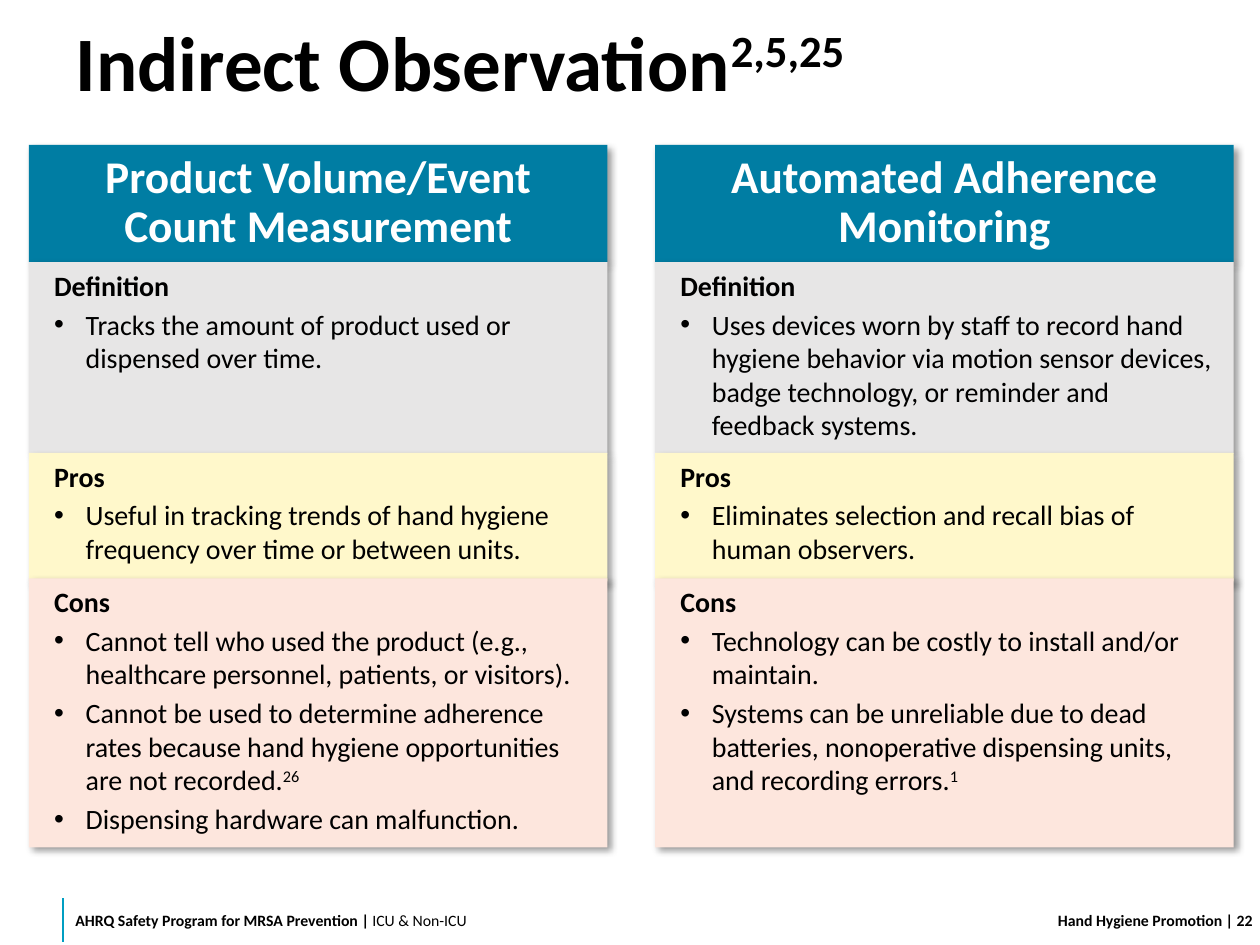
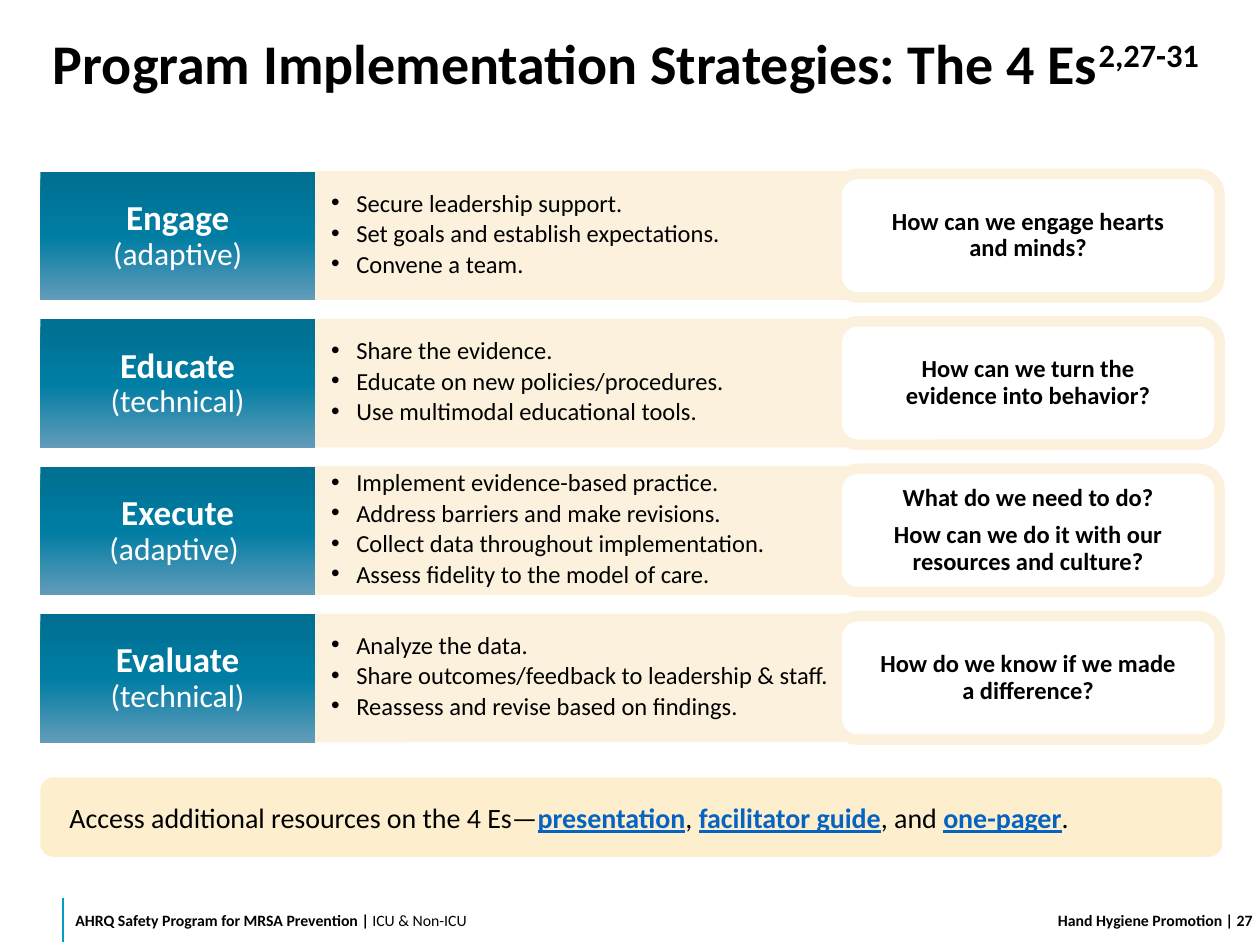
import copy
from dataclasses import dataclass
from typing import Any, NamedTuple

import lxml.etree
import pptx
import pptx.dml.color
import pptx.enum.shapes
import pptx.enum.text
import pptx.oxml.ns
import pptx.util

RGB = pptx.dml.color.RGBColor
KIND = pptx.enum.shapes.MSO_SHAPE
ALIGN = pptx.enum.text.PP_ALIGN
ANCHOR = pptx.enum.text.MSO_ANCHOR
Pt = pptx.util.Pt
qn = pptx.oxml.ns.qn

# Colours
BLACK = RGB(0x00, 0x00, 0x00)
WHITE = RGB(0xFF, 0xFF, 0xFF)
TEAL = RGB(0x00, 0x7D, 0xA3)
DEEP = RGB(0x00, 0x6F, 0x91)
PALE = RGB(0x63, 0x9C, 0xBA)
CYAN = RGB(0x00, 0x9E, 0xC2)
GREY = RGB(0xE7, 0xE6, 0xE6)
LEMON = RGB(0xFF, 0xF8, 0xCB)
ROSE = RGB(0xFD, 0xE6, 0xDD)
CREAM = RGB(0xFC, 0xF1, 0xDD)
SAND = RGB(0xFD, 0xEF, 0xCD)
BLUE = RGB(0x05, 0x63, 0xC1)

# The slide is a grid of 100 columns by 75 rows of equal unit
WIDE, HIGH = pptx.util.Inches(10), pptx.util.Inches(7.5)
UNIT = WIDE // 100
FACE = "Calibri"


def grid(cells: float) -> int:
    return round(cells * UNIT)


class Box(NamedTuple):
    col: float
    row: float
    cols: float
    rows: float

    def place(self) -> tuple:
        return tuple(grid(v) for v in self)


class Run(NamedTuple):
    text: str
    form: dict = {}
    high: bool = False


@dataclass
class Para:
    runs: list
    form: dict
    hang: float = 0


@dataclass
class Style:
    """Text frame look: insets in grid units, font and anchor."""
    pad: tuple
    font: dict
    anchor: Any = ANCHOR.MIDDLE


def put(item: Any, form: dict) -> None:
    for name, value in form.items():
        setattr(item, name, value)


def font(size: float, tint: RGB = BLACK, bold: bool = False) -> dict:
    return {"name": FACE, "size": Pt(size), "bold": bold, "tint": tint}


def write(frame: Any, style: Style, paras: list) -> None:
    sides = ("margin_left", "margin_top", "margin_right", "margin_bottom")
    put(frame, {"word_wrap": True, "vertical_anchor": style.anchor,
                "auto_size": pptx.enum.text.MSO_AUTO_SIZE.NONE,
                **{side: grid(v) for side, v in zip(sides, style.pad)}})
    for i, para in enumerate(paras):
        line = frame.paragraphs[0] if i == 0 else frame.add_paragraph()
        if para.hang:
            props = line._p.get_or_add_pPr()
            props.set("marL", str(grid(para.hang)))
            props.set("indent", str(-grid(para.hang)))
            lxml.etree.SubElement(props, qn("a:buFont")).set("typeface", "Arial")
            lxml.etree.SubElement(props, qn("a:buChar")).set("char", "•")
        put(line, {"alignment": ALIGN.LEFT, **para.form})
        if i == 0:
            line.space_before = Pt(0)
        for run in para.runs:
            part = line.add_run()
            part.text = run.text
            form = {**style.font, **run.form}
            part.font.color.rgb = form.pop("tint")
            put(part.font, form)
            if run.high:
                part._r.get_or_add_rPr().set("baseline", "30000")


def panel(slide: Any, box: Box, fill: RGB, kind: Any = KIND.RECTANGLE,
          edge: float = 0, shade: bool = False, bend: float = 0) -> Any:
    shape = slide.shapes.add_shape(kind, *box.place())
    shape.shadow.inherit = False
    shape.fill.solid()
    shape.fill.fore_color.rgb = fill
    if edge:
        shape.line.color.rgb = CREAM
        shape.line.width = Pt(edge)
    else:
        shape.line.fill.background()
    if bend:
        shape.adjustments[0] = bend
    if shade:
        cast(shape)
    return shape


def cast(shape: Any) -> None:
    """Add a soft drop shadow to the lower right."""
    outer = lxml.etree.SubElement(
        shape._element.spPr.find(qn("a:effectLst")), qn("a:outerShdw"),
        blurRad=str(Pt(4)), dist=str(Pt(3)), dir="2700000", algn="tl", rotWithShape="0")
    tint = lxml.etree.SubElement(outer, qn("a:srgbClr"), val=str(BLACK))
    lxml.etree.SubElement(tint, qn("a:alpha"), val="40000")


def blend(shape: Any, tints: list) -> None:
    """Fill from top to bottom with evenly spaced colours."""
    shape.fill.gradient()
    shape.fill.gradient_angle = 270
    stops = shape._element.spPr.find(qn("a:gradFill")).find(qn("a:gsLst"))
    while len(stops) < len(tints):
        stops.append(copy.deepcopy(stops[-1]))
    for i, (stop, tint) in enumerate(zip(shape.fill.gradient_stops, tints)):
        stop.position = i / (len(tints) - 1)
        stop.color.rgb = tint


def label(slide: Any, box: Box, style: Style, para: Para) -> None:
    write(slide.shapes.add_textbox(*box.place()).text_frame, style, [para])


# Shared frame: title and footer
SMALL = font(9, bold=True)


def start(deck: Any, box: Box, size: float, text: str, notes: str, page: int) -> Any:
    slide = deck.slides.add_slide(deck.slide_layouts[5])
    title = slide.shapes.title
    put(title, dict(zip(("left", "top", "width", "height"), box.place())))
    write(title.text_frame, Style((1, 1, 1, 0.5), font(size, bold=True)),
          [Para([Run(text), Run(notes, high=True)], {"line_spacing": 0.9})])

    rule = slide.shapes.add_connector(
        pptx.enum.shapes.MSO_CONNECTOR.STRAIGHT,
        grid(5), grid(71.3), grid(5), grid(74.8))
    rule.line.color.rgb = CYAN
    rule.line.width = Pt(1)
    lxml.etree.SubElement(rule._element.spPr, qn("a:effectLst"))

    label(slide, Box(5, 71, 41, 4), Style((1, 0, 1, 0), SMALL),
          Para([Run("AHRQ Safety Program for MRSA Prevention | "),
                Run("ICU & Non-ICU", {"bold": False})], {}))
    label(slide, Box(71, 71, 26, 4), Style((1, 0.5, 0, 0.5), SMALL),
          Para([Run("Hand Hygiene Promotion")], {"alignment": ALIGN.RIGHT}))
    label(slide, Box(97, 71, 3, 4), Style((0, 0.5, 0, 0.5), SMALL),
          Para([Run(f" | {page}")], {}))
    return slide


# Slide one: two stacked columns
class Band(NamedTuple):
    name: str
    row: float
    rows: float
    fill: RGB


BANDS = [Band("Definition", 20.8, 15.2, GREY),
         Band("Pros", 35.95, 10.2, LEMON),
         Band("Cons", 45.9, 21.35, ROSE)]

# Each point is its text and, if any, its raised note
METHODS = {
    "Product Volume/Event Count Measurement": [
        [("Tracks the amount of product used or dispensed over time.", "")],
        [("Useful in tracking trends of hand hygiene frequency over time "
          "or between units.", "")],
        [("Cannot tell who used the product (e.g., healthcare personnel, "
          "patients, or visitors).", ""),
         ("Cannot be used to determine adherence rates because hand hygiene "
          "opportunities are not recorded.", "26"),
         ("Dispensing hardware can malfunction.", "")]],
    "Automated Adherence Monitoring": [
        [("Uses devices worn by staff to record hand hygiene behavior via motion "
          "sensor devices, badge technology, or reminder and feedback systems.", "")],
        [("Eliminates selection and recall bias of human observers.", "")],
        [("Technology can be costly to install and/or maintain.", ""),
         ("Systems can be unreliable due to dead batteries, nonoperative "
          "dispensing units, and recording errors.", "1")]],
}
HEAD = Style((2, 0.5, 2, 0.5), font(25.9, WHITE, True))
BODY = Style((2, 0.5, 1.5, 0.5), font(16), ANCHOR.TOP)
MID = {"alignment": ALIGN.CENTER, "line_spacing": 0.9}


def compare(deck: Any) -> None:
    slide = start(deck, Box(5, 0, 90, 10), 44, "Indirect Observation", "2,5,25", 22)
    gap = {"space_before": Pt(3)}
    for i, (name, groups) in enumerate(METHODS.items()):
        col = 2.3 + i * 49.7
        top = panel(slide, Box(col, 11.5, 45.9, 9.3), TEAL, shade=True)
        write(top.text_frame, HEAD, [Para([Run(name)], MID)])
        for band, points in zip(BANDS, groups):
            card = panel(slide, Box(col, band.row, 45.9, band.rows), band.fill, shade=True)
            paras = [Para([Run(band.name, {"bold": True})], gap)]
            for text, note in points:
                runs = [Run(text)] + ([Run(note, high=True)] if note else [])
                paras.append(Para(runs, gap, 2.5))
            write(card.text_frame, BODY, paras)


# Slide two: four strategy rows
class Step(NamedTuple):
    name: str
    mode: str
    tasks: list
    asks: list


STEPS = [
    Step("Engage ", "(adaptive)",
         ["Secure leadership support.", "Set goals and establish expectations.",
          "Convene a team."],
         ["How can we engage hearts and minds?"]),
    Step("Educate ", "(technical)",
         ["Share the evidence.", "Educate on new policies/procedures.",
          "Use multimodal educational tools."],
         ["How can we turn the evidence into behavior?"]),
    Step("Execute ", "(adaptive) ",
         ["Implement evidence-based practice.", "Address barriers and make revisions.",
          "Collect data throughout implementation.",
          "Assess fidelity to the model of care."],
         ["What do we need to do?", "How can we do it with our resources and culture?"]),
    Step("Evaluate ", "(technical)",
         ["Analyze the data.", "Share outcomes/feedback to leadership & staff.",
          "Reassess and revise based on findings."],
         ["How do we know if we made a difference?"]),
]
TASK = Style((3.5, 0.1, 4.5, 0.1), font(14))
ASK = Style((2.5, 1.5, 2.5, 1.5), font(14, bold=True))
NAME = Style((3, 2, 3, 2), font(20, WHITE, True))
MORE = Style((2, 1.5, 2, 1.5), font(16))
ROUND = KIND.ROUNDED_RECTANGLE


def plan(deck: Any) -> None:
    slide = start(deck, Box(3.2, 0, 95.7, 10), 32,
                  "Program Implementation Strategies: The 4 Es", "2,27-31", 27)
    tight = {"line_spacing": 0.8, "space_before": Pt(2), "space_after": Pt(2)}
    for i, step in enumerate(STEPS):
        row = 13.8 + i * 11.7
        tasks = panel(slide, Box(22.3, row, 48.6, 9.8), CREAM, ROUND, 3, bend=0.17)
        write(tasks.text_frame, TASK, [Para([Run(t)], tight, 2) for t in step.tasks])
        asks = panel(slide, Box(66.4, row, 30.4, 9.8), WHITE, ROUND, 6, bend=0.17)
        write(asks.text_frame, ASK,
              [Para([Run(t)], {**MID, "space_after": Pt(6)}) for t in step.asks])
        name = panel(slide, Box(3.2, row - 0.15, 21.8, 10.2), TEAL)
        blend(name, [DEEP, TEAL, PALE])
        mode = Run(step.mode, {"size": Pt(18), "bold": False})
        write(name.text_frame, NAME, [Para([Run(step.name), mode], MID)])

    # Resource strip
    link = {"tint": BLUE, "bold": True, "underline": True}
    strip = panel(slide, Box(3.2, 61.7, 93.8, 6.3), SAND, ROUND)
    write(strip.text_frame, MORE, [Para([
        Run("Access additional resources on the 4 Es—"), Run("presentation", link),
        Run(", "), Run("facilitator guide", link),
        Run(", and "), Run("one-pager", link), Run(".")], {})])


def main() -> None:
    deck = pptx.Presentation()
    put(deck, {"slide_width": WIDE, "slide_height": HIGH})
    compare(deck)
    plan(deck)
    deck.save("out.pptx")


if __name__ == "__main__":
    main()
